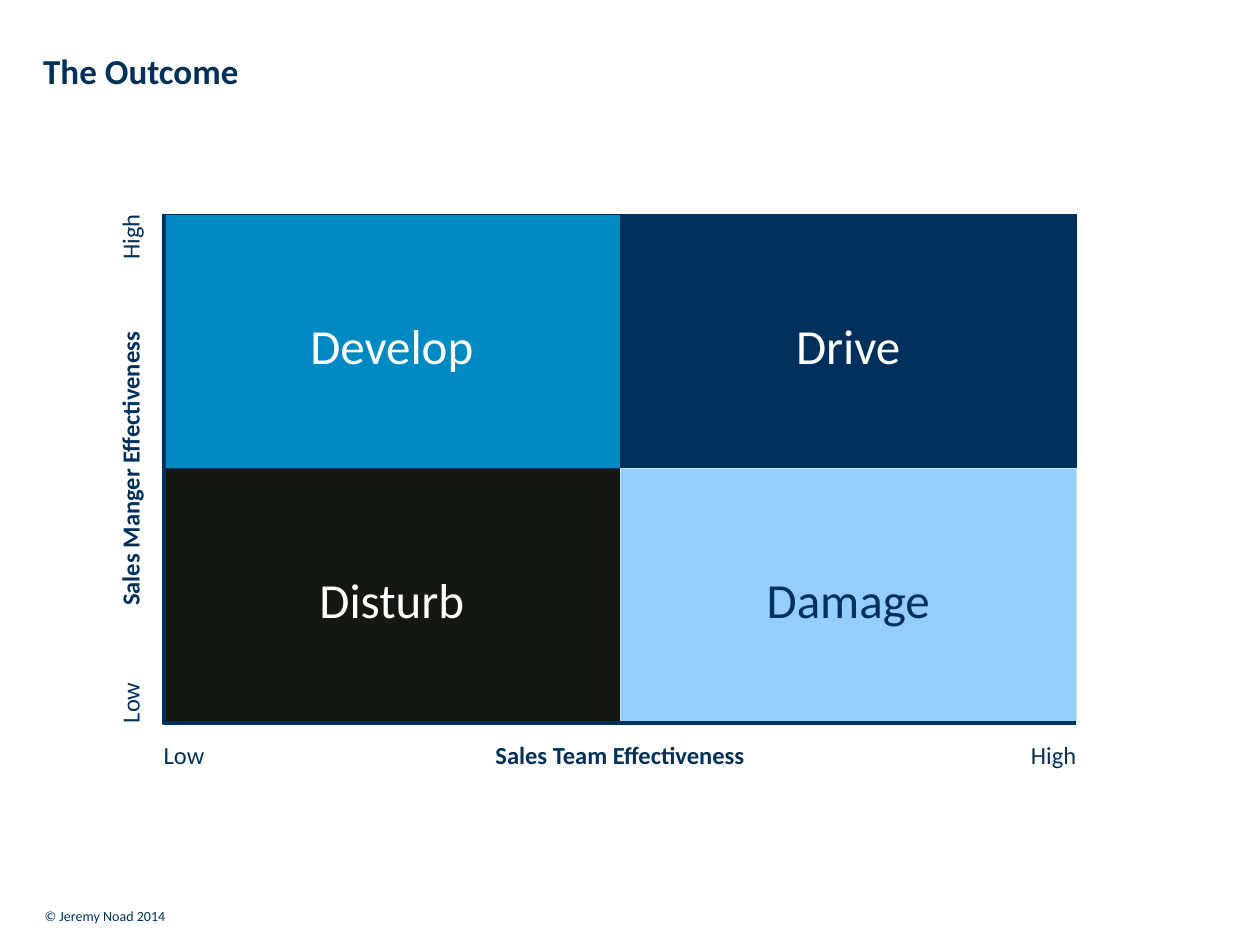
from pptx import Presentation, util as u
from pptx.dml.color import RGBColor
from pptx.enum import shapes, text

NAVY, WHITE = "00305C", "FFFFFF"
LEFT, TOP, CELL_WIDTH, CELL_HEIGHT = 3.3, 4.32, 9.2, 5.13
RIGHT, BOTTOM = LEFT + 2 * CELL_WIDTH, TOP + 2 * CELL_HEIGHT
ALIGN, ANCHOR = text.PP_ALIGN, text.MSO_ANCHOR
QUADRANTS = [
    ("Develop", 0, 0, "008AC4", NAVY, WHITE),
    ("Disturb", 0, 1, "151713", NAVY, WHITE),
    ("Drive", 1, 0, NAVY, NAVY, WHITE),
    ("Damage", 1, 1, "96CDFF", "C0ECFF", NAVY),
]


def color(value):
    """Turn a hex string into a colour."""
    return RGBColor.from_string(value)


def write(shape, words, size, ink=NAVY, bold=False, align=ALIGN.LEFT,
          anchor=ANCHOR.MIDDLE, insets=(0, 0, 0, 0), spacing=1.1):
    """Fill a shape with one formatted paragraph."""
    frame = shape.text_frame
    frame.word_wrap = True
    frame.auto_size = text.MSO_AUTO_SIZE.NONE
    frame.vertical_anchor = anchor
    (frame.margin_left, frame.margin_top,
     frame.margin_right, frame.margin_bottom) = map(u.Cm, insets)
    para = frame.paragraphs[0]
    para.alignment = align
    para.line_spacing = spacing
    para.space_before = u.Pt(0)
    span = para.add_run()
    span.text = words
    span.font.name = "Calibri"
    span.font.size = u.Pt(size)
    span.font.bold = bold
    span.font.color.rgb = color(ink)


def add_title(page, words):
    """Place and format the title."""
    title = page.shapes.title
    title.left, title.top = u.Cm(0.46), u.Cm(0.46)
    title.width, title.height = u.Cm(16.05), u.Cm(2.82)
    write(title, words, 20, bold=True, anchor=ANCHOR.TOP,
          insets=(0.41, 0.46, 0, 0))


def add_label(page, words, left, top, width, height, size=14, rotation=0,
              **style):
    """Add a text box, turned about its centre if asked."""
    box = page.shapes.add_textbox(*map(u.Cm, (left, top, width, height)))
    box.rotation = rotation
    write(box, words, size, **style)


def add_quadrant(page, words, column, row, fill, line, ink):
    """Add one coloured cell of the matrix."""
    box = page.shapes.add_shape(
        shapes.MSO_SHAPE.RECTANGLE,
        u.Cm(LEFT + column * CELL_WIDTH), u.Cm(TOP + row * CELL_HEIGHT),
        u.Cm(CELL_WIDTH), u.Cm(CELL_HEIGHT))
    box.shadow.inherit = False
    box.fill.solid()
    box.fill.fore_color.rgb = color(fill)
    box.line.color.rgb = color(line)
    box.line.width = u.Pt(0.5)
    write(box, words, 28, ink, align=ALIGN.CENTER,
          insets=(0.25, 0.13, 0.25, 0.13))


def add_axes(page):
    """Draw the L-shaped axis line."""
    builder = page.shapes.build_freeform(u.Cm(LEFT), u.Cm(TOP))
    builder.add_line_segments(
        [(u.Cm(LEFT), u.Cm(BOTTOM)), (u.Cm(RIGHT), u.Cm(BOTTOM))], close=False)
    axes = builder.convert_to_shape()
    axes.shadow.inherit = False
    axes.fill.background()
    axes.line.color.rgb = color(NAVY)
    axes.line.width = u.Pt(2.25)


def add_axis_labels(page):
    """Name both axes and mark their low and high ends."""
    end_width = CELL_WIDTH / 2
    add_label(page, "Sales Team Effectiveness", LEFT, BOTTOM, 2 * CELL_WIDTH,
              1.2, bold=True, align=ALIGN.CENTER)
    add_label(page, "Low", LEFT, BOTTOM, end_width, 1.2)
    add_label(page, "High", RIGHT - end_width, BOTTOM, end_width, 1.2,
              align=ALIGN.RIGHT)
    for words, width, middle, bold, align in [
        ("Sales Manger Effectiveness", 2 * CELL_HEIGHT, TOP + CELL_HEIGHT,
         True, ALIGN.CENTER),
        ("Low", 2.4, BOTTOM - 1.2, False, ALIGN.LEFT),
        ("High", 2.4, TOP + 1.2, False, ALIGN.RIGHT),
    ]:
        add_label(page, words, 2.59 - width / 2, middle - 0.7, width, 1.4,
                  rotation=270, bold=bold, align=align)


def main():
    """Build the effectiveness matrix slide."""
    deck = Presentation()
    deck.slide_width, deck.slide_height = u.Cm(25.4), u.Cm(19.05)
    page = deck.slides.add_slide(deck.slide_layouts[5])
    add_title(page, "The Outcome")
    for quadrant in QUADRANTS:
        add_quadrant(page, *quadrant)
    add_axes(page)
    add_axis_labels(page)
    add_label(page, "© Jeremy Noad 2014", 0.9, 17.93, 18.44, 0.7, size=8,
              anchor=ANCHOR.BOTTOM, spacing=1.0)
    deck.save("out.pptx")


if __name__ == "__main__":
    main()
